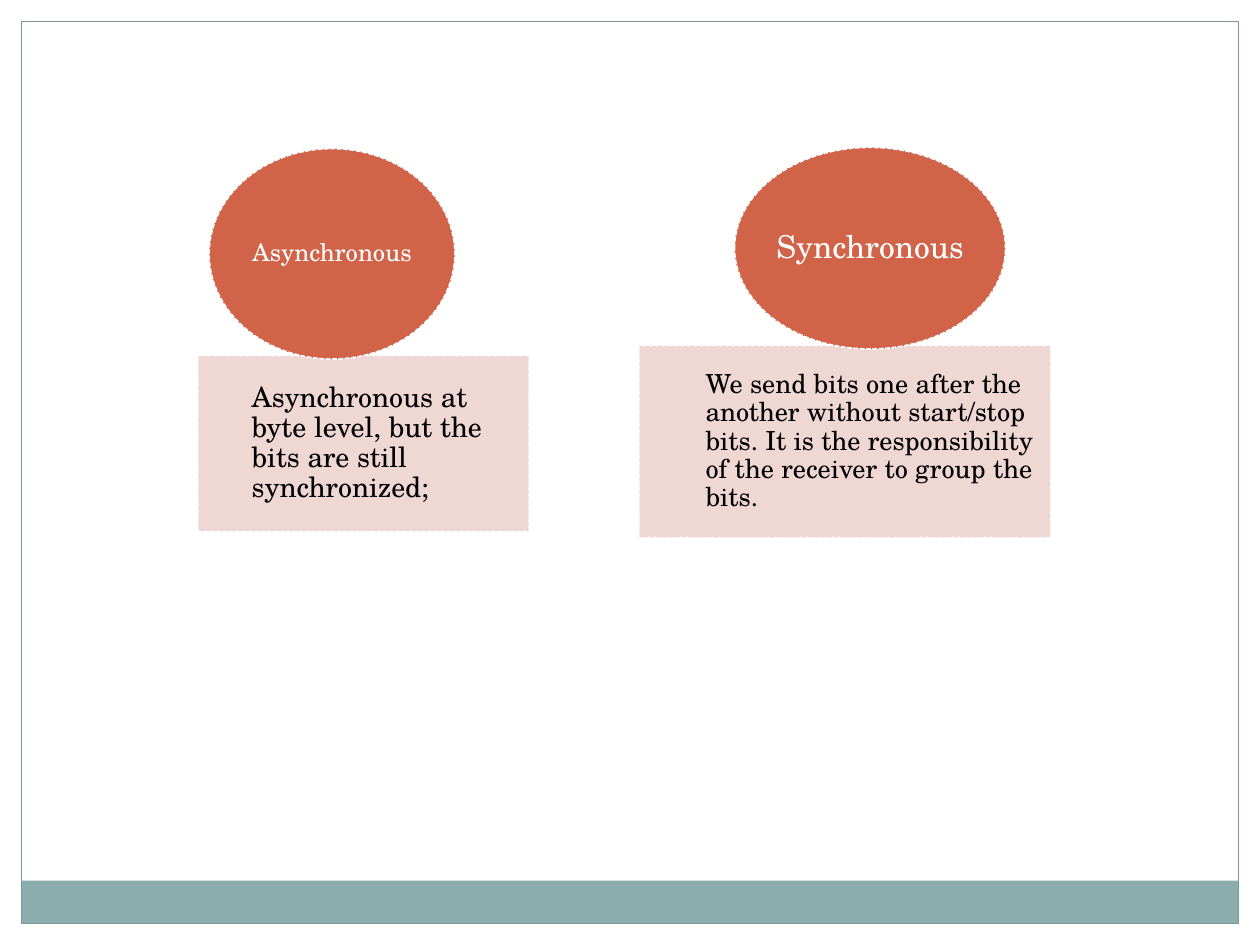
"""Build a slide that sets asynchronous beside synchronous transmission."""
from lxml.etree import SubElement
from pptx import Presentation
from pptx.dml.color import RGBColor
from pptx.enum.dml import MSO_LINE
from pptx.enum.shapes import MSO_SHAPE
from pptx.enum.text import MSO_ANCHOR, PP_ALIGN
from pptx.oxml.ns import qn
from pptx.util import Inches, Pt

WIDTH, HEIGHT = 10, 7.5
MARGIN, BAND_HEIGHT = 0.17, 0.34
INDENT_SHARE, PADDING = 0.16, 0.12
FONT = "TeX Gyre Schola"
COLORS = {
    "white": "FFFFFF",
    "black": "000000",
    "band": "8CADAE",
    "frame": "7C999A",
    "circle": "D16349",
    "panel": "EED3D0",
}
MODES = [
    {
        "title": "Asynchronous",
        "title_size": 14,
        "circle": (1.66, 1.18, 1.95, 1.67),
        "detail": "Asynchronous at byte level, but the bits are still synchronized;",
        "detail_size": 16,
        "panel": (1.58, 2.83, 2.61, 1.38),
    },
    {
        "title": "Synchronous",
        "title_size": 18,
        "circle": (5.83, 1.17, 2.15, 1.6),
        "detail": "We send bits one after the another without start/stop bits. "
                  "It is the responsibility of the receiver to group the bits.",
        "detail_size": 15,
        "panel": (5.08, 2.75, 3.25, 1.51),
    },
]


def add_box(page, kind, area, fill=None, line=None, weight=0.9, dash=None, opacity=100):
    box = page.shapes.add_shape(kind, *(Inches(length) for length in area))
    box.shadow.inherit = False
    if fill:
        box.fill.solid()
        box.fill.fore_color.rgb = RGBColor.from_string(COLORS[fill])
    else:
        box.fill.background()
    if line:
        box.line.color.rgb = RGBColor.from_string(COLORS[line])
        box.line.width = Pt(weight)
        if dash:
            box.line.dash_style = dash
    else:
        box.line.fill.background()
    if opacity < 100:
        for color in box._element.spPr.iter(qn("a:srgbClr")):
            SubElement(color, qn("a:alpha")).set("val", str(opacity * 1000))
    return box


def write(box, text, size=16, color="black", align=PP_ALIGN.LEFT, insets=(0, 0, 0, 0)):
    frame = box.text_frame
    frame.word_wrap = True
    frame.vertical_anchor = MSO_ANCHOR.MIDDLE
    (frame.margin_left, frame.margin_top,
     frame.margin_right, frame.margin_bottom) = (Inches(inset) for inset in insets)
    para = frame.paragraphs[0]
    para.alignment = align
    para.line_spacing = 0.9
    span = para.add_run()
    span.text = text
    span.font.name = FONT
    span.font.size = Pt(size)
    span.font.color.rgb = RGBColor.from_string(COLORS[color])


def add_mode(page, mode):
    panel = add_box(page, MSO_SHAPE.RECTANGLE, mode["panel"], fill="panel",
                    line="panel", dash=MSO_LINE.SQUARE_DOT, opacity=90)
    indent = mode["panel"][2] * INDENT_SHARE
    write(panel, mode["detail"], size=mode["detail_size"],
          insets=(indent, PADDING, PADDING, PADDING))
    circle = add_box(page, MSO_SHAPE.OVAL, mode["circle"], fill="circle",
                     line="white", dash=MSO_LINE.SQUARE_DOT)
    write(circle, mode["title"], size=mode["title_size"], color="white",
          align=PP_ALIGN.CENTER)


def main():
    deck = Presentation()
    deck.slide_width, deck.slide_height = Inches(WIDTH), Inches(HEIGHT)
    page = deck.slides.add_slide(deck.slide_layouts[6])
    inner_width, inner_height = WIDTH - 2 * MARGIN, HEIGHT - 2 * MARGIN
    band_top = HEIGHT - MARGIN - BAND_HEIGHT
    add_box(page, MSO_SHAPE.RECTANGLE, (MARGIN, band_top, inner_width, BAND_HEIGHT),
            fill="band")
    add_box(page, MSO_SHAPE.RECTANGLE, (MARGIN, MARGIN, inner_width, inner_height),
            line="frame", weight=0.75)
    for mode in MODES:
        add_mode(page, mode)
    deck.save("out.pptx")


if __name__ == "__main__":
    main()
